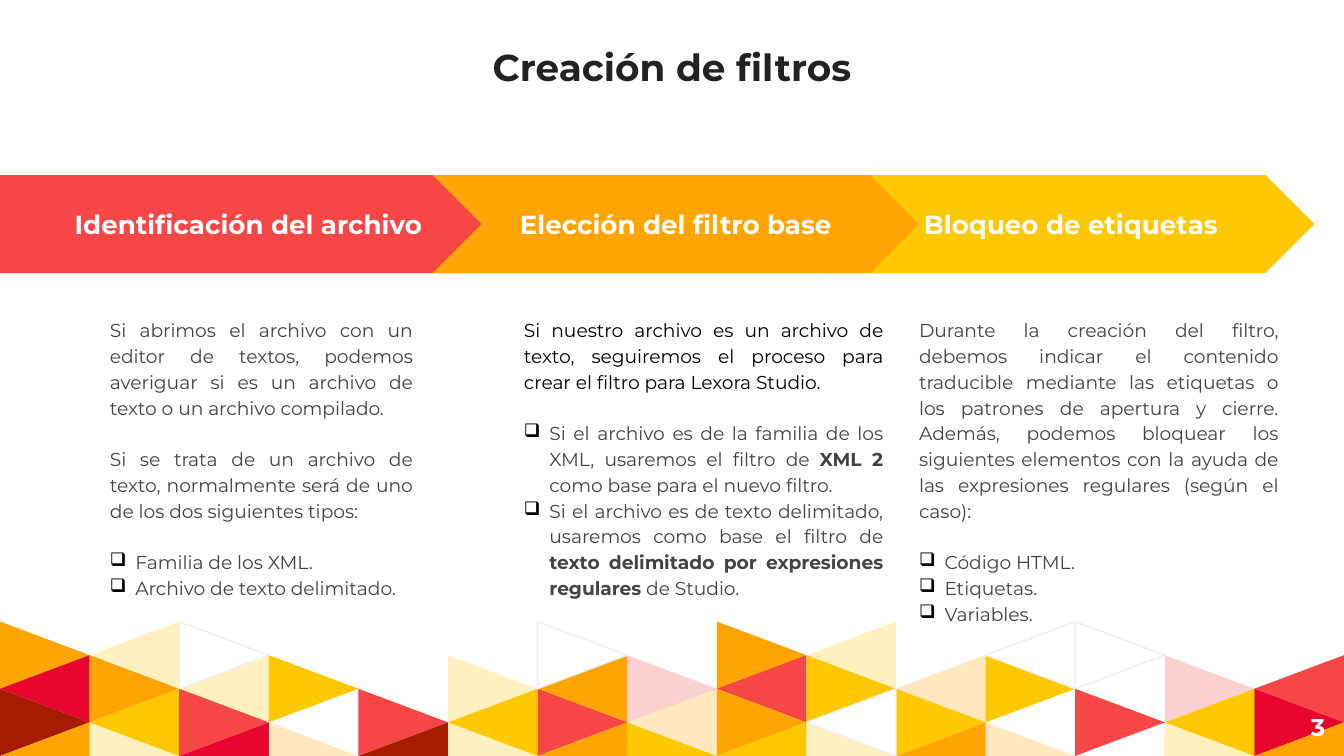
from lxml import etree
from pptx import Presentation
from pptx.dml.color import RGBColor
from pptx.enum.shapes import MSO_SHAPE
from pptx.enum.text import MSO_ANCHOR, MSO_AUTO_SIZE, PP_ALIGN
from pptx.oxml.ns import qn
from pptx.util import Pt

PENTAGON, CHEVRON = MSO_SHAPE.PENTAGON, MSO_SHAPE.CHEVRON
LEFT, CENTER, RIGHT, JUSTIFY = PP_ALIGN.LEFT, PP_ALIGN.CENTER, PP_ALIGN.RIGHT, PP_ALIGN.JUSTIFY
TOP, MIDDLE, BOTTOM = MSO_ANCHOR.TOP, MSO_ANCHOR.MIDDLE, MSO_ANCHOR.BOTTOM

FONT = "Montserrat"
COLORS = {
    "title": "222222", "body": "434343", "black": "000000", "white": "FFFFFF",
    "outline": "EFEFEF", "orange": "FFA400", "yellow": "FFC800",
    "red": "F64646", "crimson": "E8062F", "brown": "A61C00",
}

# Content
TITLE = "Creación de filtros"
PAGE_NUMBER = "3"

# Paragraph: (alignment, has bullet, gap before, colour, runs as (text, bold))
# Step: (heading, preset, arrow left, arrow width, fill, text left, text width, paragraphs)
# Listed from back to front, so that each arrow overlaps the right neighbour
STEPS = [
    ("Bloqueo de etiquetas", CHEVRON, 443.5, 260.6, "yellow", 485.3, 206.6, [
        (JUSTIFY, False, False, "body", [(
            "Durante la creación del filtro, debemos indicar el contenido traducible "
            "mediante las etiquetas o los patrones de apertura y cierre. Además, podemos "
            "bloquear los siguientes elementos con la ayuda de las expresiones regulares "
            "(según el caso):", False)]),
        (LEFT, True, True, "body", [("Código HTML.", False)]),
        (LEFT, True, False, "body", [("Etiquetas.", False)]),
        (LEFT, True, False, "body", [("Variables.", False)]),
    ]),
    ("Identificación del archivo", PENTAGON, 0, 279.4, "red", 51.8, 176.4, [
        (JUSTIFY, False, False, "body", [(
            "Si abrimos el archivo con un editor de textos, podemos averiguar si es un "
            "archivo de texto o un archivo compilado.", False)]),
        (JUSTIFY, False, True, "body", [(
            "Si se trata de un archivo de texto, normalmente será de uno de los dos "
            "siguientes tipos:", False)]),
        (LEFT, True, True, "body", [("Familia de los XML.", False)]),
        (LEFT, True, False, "body", [("Archivo de texto delimitado.", False)]),
    ]),
    ("Elección del filtro base", CHEVRON, 231.8, 260.6, "orange", 273.6, 206.6, [
        (JUSTIFY, False, False, "black", [(
            "Si nuestro archivo es un archivo de texto, seguiremos el proceso para crear "
            "el filtro para Lexora Studio.", False)]),
        (JUSTIFY, True, True, "body", [
            ("Si el archivo es de la familia de los XML, usaremos el filtro de ", False),
            ("XML 2", True),
            (" como base para el nuevo filtro.", False)]),
        (JUSTIFY, True, False, "body", [
            ("Si el archivo es de texto delimitado, usaremos como base el filtro de ", False),
            ("texto delimitado por expresiones regulares", True),
            (" de Studio.", False)]),
    ]),
]

# Triangle mosaic: one letter per cell, lower case is transparent, a dot is empty
MOSAIC = [
    "OyW...W.Oy.WW..",
    "COyY.yOrRYoY.rR",
    "DYR.RYRoOWY.RYC",
    "OyCoDyOYYyOo.yO",
]
MOSAIC_COLORS = {"O": "orange", "Y": "yellow", "R": "red",
                 "C": "crimson", "D": "brown", "W": "white"}

# Layout
SLIDE_WIDTH, SLIDE_HEIGHT = 720, 405
CELL_WIDTH, ROW_STEP = SLIDE_WIDTH / len(MOSAIC[0]), 18
MOSAIC_TOP = SLIDE_HEIGHT - ROW_STEP * len(MOSAIC)
ARROW_TOP, ARROW_HEIGHT = 93.8, 52.5
TEXT_TOP, TEXT_HEIGHT = 162, 206
INSET, BULLET_INDENT, LINE_GAP = 7.2, 13.7, 13.8


def color(name):
    return RGBColor.from_string(COLORS[name])


def fill_shape(shape, name):
    shape.shadow.inherit = False
    shape.fill.solid()
    shape.fill.fore_color.rgb = color(name)
    shape.line.fill.background()


def prepare_frame(shape, anchor):
    frame = shape.text_frame
    frame.word_wrap = True
    frame.auto_size = MSO_AUTO_SIZE.NONE
    frame.vertical_anchor = anchor
    frame.margin_left = frame.margin_right = Pt(INSET)
    frame.margin_top = frame.margin_bottom = Pt(INSET)
    return frame


def add_run(paragraph, text, size, name, bold):
    run = paragraph.add_run()
    run.text = text
    run.font.name, run.font.size, run.font.bold = FONT, Pt(size), bold
    run.font.color.rgb = color(name)


def write_line(shape, text, size, name, alignment, anchor):
    paragraph = prepare_frame(shape, anchor).paragraphs[0]
    paragraph.alignment = alignment
    add_run(paragraph, text, size, name, True)


def add_bullet(paragraph):
    properties = paragraph._p.get_or_add_pPr()
    properties.set("marL", str(Pt(BULLET_INDENT)))
    properties.set("indent", str(-Pt(BULLET_INDENT)))
    bullet_color = etree.SubElement(properties, qn("a:buClr"))
    etree.SubElement(bullet_color, qn("a:srgbClr"), val=COLORS["black"])
    etree.SubElement(properties, qn("a:buChar"), char="❑")


def add_triangle(slide, column, row, letter):
    left, right = column * CELL_WIDTH, (column + 1) * CELL_WIDTH
    top = MOSAIC_TOP + row * ROW_STEP
    middle, bottom = top + ROW_STEP, min(top + 2 * ROW_STEP, SLIDE_HEIGHT)
    # Triangles point right and left by turns, in both directions of the grid
    base, tip = (left, right) if (column + row) % 2 == 0 else (right, left)
    points = [(Pt(x), Pt(y)) for x, y in [(base, bottom), (base, top), (tip, middle)]]
    builder = slide.shapes.build_freeform(*points[0])
    builder.add_line_segments(points[1:], close=True)
    triangle = builder.convert_to_shape()
    fill_shape(triangle, MOSAIC_COLORS[letter.upper()])
    if letter.islower():
        fill_color = triangle.element.spPr.find(".//" + qn("a:srgbClr"))
        etree.SubElement(fill_color, qn("a:alpha"), val="25000")
    if letter == "W":
        triangle.line.color.rgb = color("outline")
        triangle.line.width = Pt(0.75)


def add_step(slide, heading, preset, left, width, fill, text_left, text_width, paragraphs):
    arrow = slide.shapes.add_shape(preset, Pt(left), Pt(ARROW_TOP), Pt(width), Pt(ARROW_HEIGHT))
    fill_shape(arrow, fill)
    write_line(arrow, heading, 14, "white", CENTER, MIDDLE)

    box = slide.shapes.add_textbox(Pt(text_left), Pt(TEXT_TOP), Pt(text_width), Pt(TEXT_HEIGHT))
    frame = prepare_frame(box, TOP)
    for index, (alignment, bullet, gap, name, runs) in enumerate(paragraphs):
        paragraph = frame.add_paragraph() if index else frame.paragraphs[0]
        paragraph.alignment = alignment
        paragraph.line_spacing = 1.15
        paragraph.space_before = Pt(LINE_GAP if gap else 0)
        if bullet:
            add_bullet(paragraph)
        for text, bold in runs:
            add_run(paragraph, text, 10, name, bold)


def main():
    presentation = Presentation()
    presentation.slide_width, presentation.slide_height = Pt(SLIDE_WIDTH), Pt(SLIDE_HEIGHT)
    slide = presentation.slides.add_slide(presentation.slide_layouts[5])

    # Mosaic, outlined cells last so that their edges stay on top
    cells = [(column, row, letter) for row, letters in enumerate(MOSAIC)
             for column, letter in enumerate(letters) if letter != "."]
    for cell in sorted(cells, key=lambda cell: cell[2] == "W"):
        add_triangle(slide, *cell)

    # Title
    title = slide.shapes.title
    title.left, title.top, title.width, title.height = Pt(0), Pt(0), Pt(SLIDE_WIDTH), Pt(54.7)
    write_line(title, TITLE, 20, "title", CENTER, BOTTOM)

    # Page number
    number = slide.shapes.add_textbox(Pt(673.9), Pt(373.7), Pt(43.2), Pt(31))
    write_line(number, PAGE_NUMBER, 13, "white", RIGHT, MIDDLE)

    # Steps
    for step in STEPS:
        add_step(slide, *step)

    presentation.save("out.pptx")


if __name__ == "__main__":
    main()
